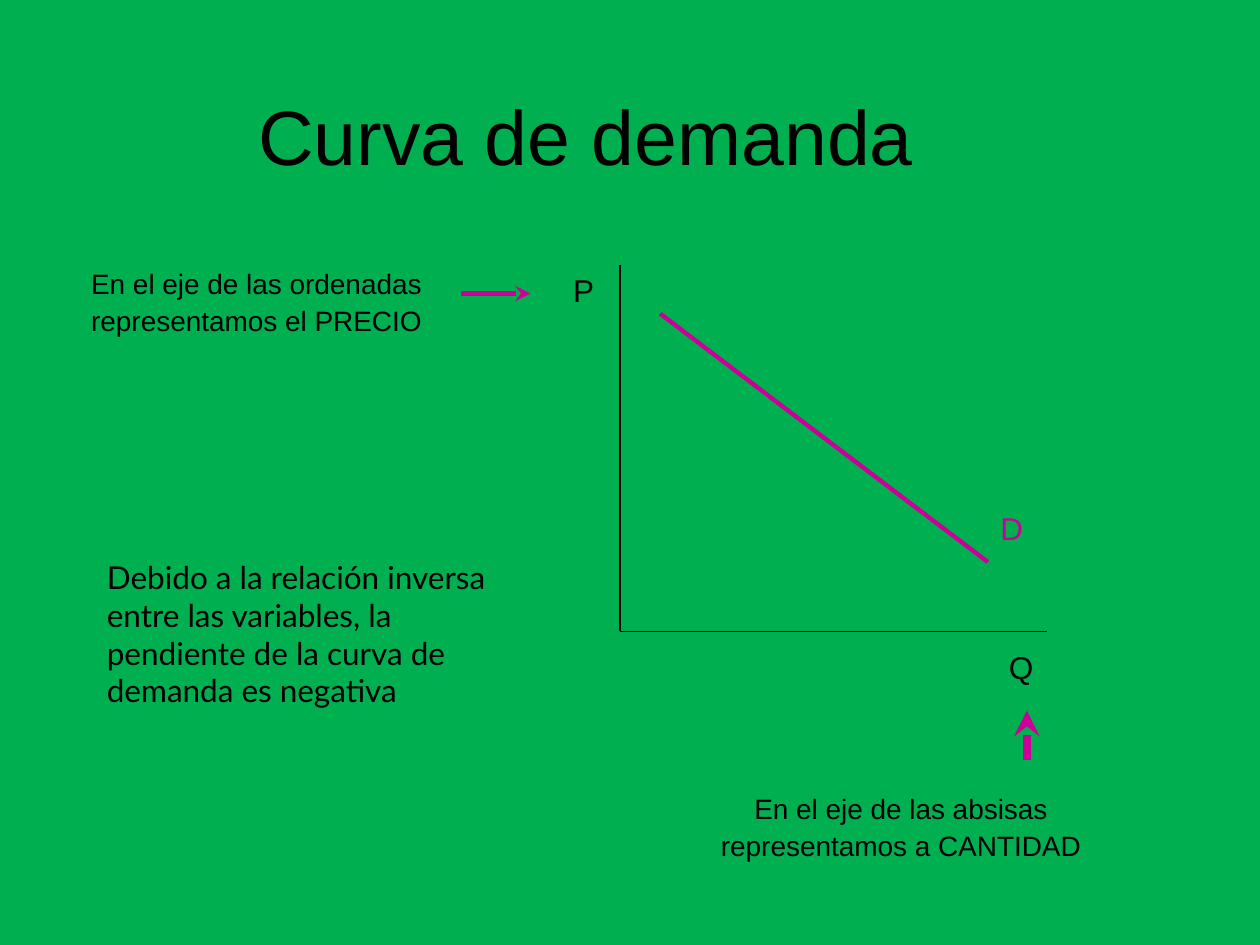
"""Builds a slide on the demand curve with labelled axes."""
from lxml.etree import SubElement
from pptx import Presentation
from pptx.dml.color import RGBColor
from pptx.enum.shapes import MSO_CONNECTOR
from pptx.enum.text import MSO_ANCHOR, PP_ALIGN
from pptx.oxml.ns import qn
from pptx.util import Inches, Pt

theme = {
    "back": RGBColor.from_string("00B050"),
    "ink": RGBColor.from_string("000000"),
    "mark": RGBColor.from_string("CC0099"),
    "head": Pt(44), "note": Pt(16), "base": Pt(18),
    "sans": "Arial", "prose": "Lato",
}

deck = Presentation()
deck.slide_width, deck.slide_height = Inches(10), Inches(7.5)
slide = deck.slides.add_slide(deck.slide_layouts[6])
slide.background.fill.solid()
slide.background.fill.fore_color.rgb = theme["back"]
col, row = deck.slide_width / 100, deck.slide_height / 75


def place(x, y):
    return int(x * col), int(y * row)


def write(text, box, size="base", font="sans", tint="ink", para={}, frame={}):
    left, top, wide, high = box
    body = slide.shapes.add_textbox(*place(left, top), *place(wide, high)).text_frame
    for name, value in {"word_wrap": True, **frame}.items():
        setattr(body, name, value)
    line = body.paragraphs[0]
    for name, value in para.items():
        setattr(line, name, value)
    run = line.add_run()
    run.text = text
    for name, value in {"name": theme[font], "size": theme[size]}.items():
        setattr(run.font, name, value)
    run.font.color.rgb = theme[tint]


mid = {"alignment": PP_ALIGN.CENTER}
write("Curva de demanda", (7.5, 4, 78, 13.4), "head", para=mid,
      frame={"vertical_anchor": MSO_ANCHOR.MIDDLE})

loose = {**mid, "line_spacing": 1.1}
inset = {"margin_left": int(4.6 * col)}
for text, box in (
    ("En el eje de las ordenadas representamos el PRECIO", (2, 20.4, 33.1, 7.1)),
    ("En el eje de las absisas representamos a CANTIDAD", (50, 62.1, 39.4, 7.1)),
):
    write(text, box, "note", para=loose, frame=inset)

write("Debido a la relación inversa entre las variables, la pendiente "
      "de la curva de demanda es negativa", (7.5, 43.8, 32.3, 13), font="prose")

for text, left, top, wide, tint in (
    ("P", 44.5, 21, 3.9, "ink"),
    ("Q", 79.1, 50.9, 4.7, "ink"),
    ("D", 78.4, 39.9, 3.9, "mark"),
):
    write(text, (left, top, wide, 4), tint=tint)

zero = (49.2, 50.1)
for start, end, tint, width, arrow in (
    ((zero[0], 21), zero, "ink", 0.75, False),
    (zero, (83.1, zero[1]), "ink", 0.75, False),
    ((52.4, 24.9), (78.4, 44.6), "mark", 2.5, False),
    ((36.6, 23.3), (42.1, 23.3), "mark", 3, True),
    ((81.5, 60.3), (81.5, 56.4), "mark", 5, True),
):
    link = slide.shapes.add_connector(
        MSO_CONNECTOR.STRAIGHT, *place(*start), *place(*end))
    link.line.color.rgb = theme[tint]
    link.line.width = Pt(width)
    props = link._element.spPr
    if arrow:
        SubElement(props.find(qn("a:ln")), qn("a:tailEnd"), type="stealth")
    SubElement(props, qn("a:effectLst"))

deck.save("out.pptx")
